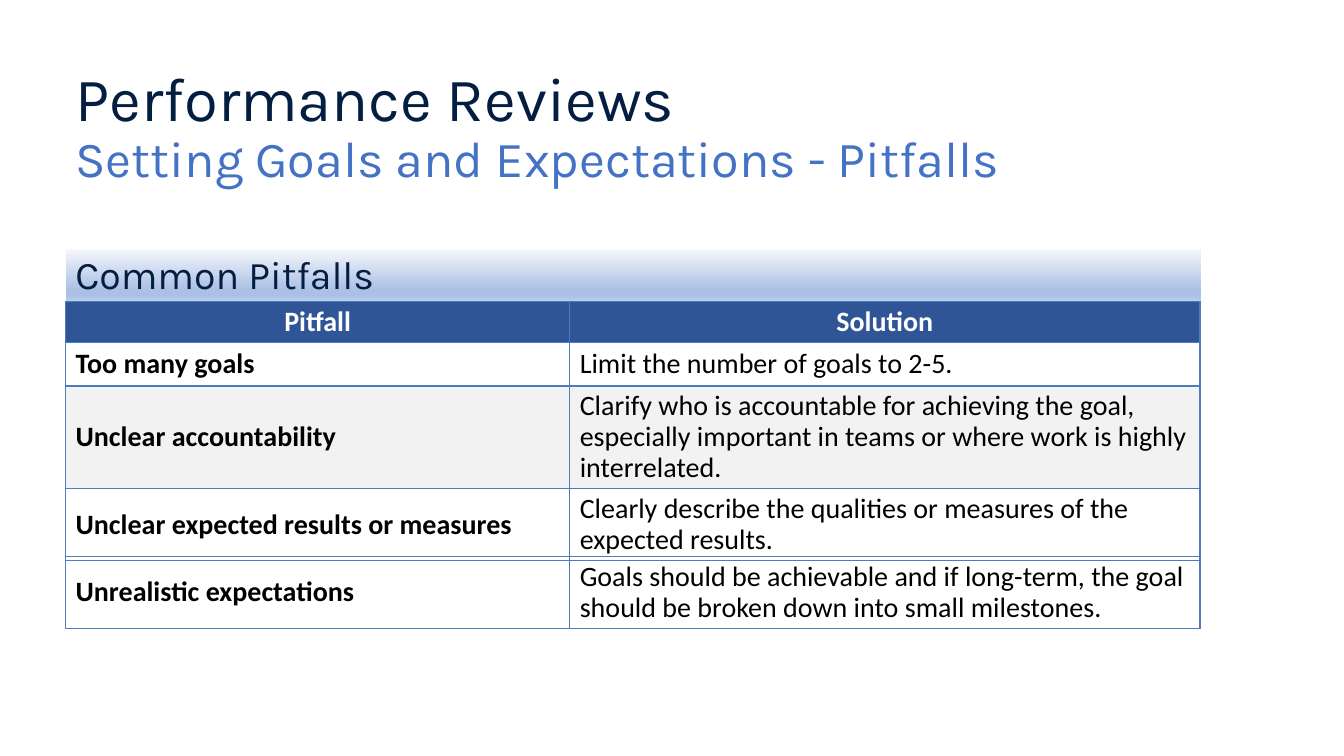
from dataclasses import dataclass
from typing import Optional

import lxml.etree
import pptx
import pptx.dml.color
import pptx.enum.shapes
import pptx.enum.text
import pptx.oxml
import pptx.oxml.ns
import pptx.util

ALIGN = pptx.enum.text.PP_ALIGN
ANCHOR = pptx.enum.text.MSO_ANCHOR
SLIDE_WIDTH = pptx.util.Inches(13.33)
SLIDE_HEIGHT = pptx.util.Inches(7.5)


@dataclass(frozen=True)
class Theme:
    heading_font: str = "Karla"
    body_font: str = "Calibri"
    navy: str = "041E42"
    blue: str = "4472C4"
    header_fill: str = "2F5597"
    band_fill: str = "F2F2F2"
    border: str = "4A7EBB"
    white: str = "FFFFFF"
    black: str = "000000"
    banner_stops: tuple = ((0, "F6F8FC"), (74, "ABC0E4"), (83, "ABC0E4"), (100, "C7D5ED"))
    title_size: float = 44
    subtitle_size: float = 36
    banner_size: float = 28
    body_size: float = 20
    border_width: float = 1
    line_spacing: float = 0.9


THEME = Theme()


@dataclass(frozen=True)
class Area:
    left: float
    top: float
    width: float
    height: float

    def emu(self) -> tuple:
        return (across(self.left), down(self.top), across(self.width), down(self.height))


@dataclass(frozen=True)
class TextRun:
    text: str
    font: str
    size: float
    color: str
    bold: bool = False


@dataclass(frozen=True)
class PitfallRow:
    pitfall: str
    solution: str
    height: float
    fill: Optional[str] = None
    header: bool = False


LEFT = 4.88
COLUMNS = (37.51, 46.89)
TITLE_AREA = Area(LEFT, 7.33, 86.27, 19.33)
BANNER_AREA = Area(LEFT, 32.93, 84.47, 7.33)

MAIN_TOP = 39.87
MAIN_ROWS = (
    PitfallRow("Pitfall", "Solution", 5.47, THEME.header_fill, header=True),
    PitfallRow("Too many goals", "Limit the number of goals to 2-5.", 5.73),
    PitfallRow(
        "Unclear accountability",
        "Clarify who is accountable for achieving the goal, especially important "
        "in teams or where work is highly interrelated.",
        13.6,
        THEME.band_fill,
    ),
    PitfallRow(
        "Unclear expected results or measures",
        "Clearly describe the qualities or measures of the expected results.",
        9.4,
    ),
)
LAST_TOP = 73.6
LAST_ROWS = (
    PitfallRow(
        "Unrealistic expectations",
        "Goals should be achievable and if long-term, the goal should be broken "
        "down into small milestones.",
        9.4,
    ),
)


def across(percent: float) -> int:
    return round(SLIDE_WIDTH * percent / 100)


def down(percent: float) -> int:
    return round(SLIDE_HEIGHT * percent / 100)


def rgb(color: str) -> pptx.dml.color.RGBColor:
    return pptx.dml.color.RGBColor.from_string(color)


def write(frame, lines: tuple, align=ALIGN.LEFT) -> None:
    frame.word_wrap = True
    paragraph = frame.paragraphs[0]
    paragraph.alignment = align
    paragraph.line_spacing = THEME.line_spacing
    for index, line in enumerate(lines):
        if index:
            paragraph.add_line_break()
        run = paragraph.add_run()
        run.text = line.text
        run.font.name = line.font
        run.font.size = pptx.util.Pt(line.size)
        run.font.bold = line.bold
        run.font.color.rgb = rgb(line.color)


def add_title(slide) -> None:
    title = slide.shapes.add_textbox(*TITLE_AREA.emu())
    title.text_frame.vertical_anchor = ANCHOR.MIDDLE
    write(title.text_frame, (
        TextRun("Performance Reviews", THEME.heading_font, THEME.title_size, THEME.navy),
        TextRun("Setting Goals and Expectations - Pitfalls", THEME.heading_font,
                THEME.subtitle_size, THEME.blue),
    ))


def add_banner(slide) -> None:
    banner = slide.shapes.add_shape(
        pptx.enum.shapes.MSO_SHAPE.RECTANGLE, *BANNER_AREA.emu())
    banner.shadow.inherit = False
    banner.line.fill.background()
    banner.fill.gradient()
    banner.fill.gradient_angle = 270
    stops = banner.element.spPr.find(".//" + pptx.oxml.ns.qn("a:gsLst"))
    for stop in list(stops):
        stops.remove(stop)
    for percent, color in THEME.banner_stops:
        stop = lxml.etree.SubElement(
            stops, pptx.oxml.ns.qn("a:gs"), pos=str(percent * 1000))
        lxml.etree.SubElement(stop, pptx.oxml.ns.qn("a:srgbClr"), val=color)
    banner.text_frame.vertical_anchor = ANCHOR.MIDDLE
    write(banner.text_frame, (
        TextRun("Common Pitfalls", THEME.heading_font, THEME.banner_size, THEME.navy),
    ))


def add_borders(cell) -> None:
    properties = cell._tc.get_or_add_tcPr()
    for index, side in enumerate(("a:lnL", "a:lnR", "a:lnT", "a:lnB")):
        border = pptx.oxml.parse_xml(
            f'<{side} {pptx.oxml.ns.nsdecls("a")} w="{pptx.util.Pt(THEME.border_width)}">'
            f'<a:solidFill><a:srgbClr val="{THEME.border}"/></a:solidFill></{side}>')
        properties.insert(index, border)


def fill_cell(cell, text: str, row: PitfallRow, bold: bool) -> None:
    if row.fill:
        cell.fill.solid()
        cell.fill.fore_color.rgb = rgb(row.fill)
    else:
        cell.fill.background()
    add_borders(cell)
    cell.vertical_anchor = ANCHOR.BOTTOM if row.header else ANCHOR.MIDDLE
    color = THEME.white if row.header else THEME.black
    write(cell.text_frame,
          (TextRun(text, THEME.body_font, THEME.body_size, color, bold),),
          ALIGN.CENTER if row.header else ALIGN.LEFT)


def add_pitfalls(slide, top: float, rows: tuple) -> None:
    area = Area(LEFT, top, sum(COLUMNS), sum(row.height for row in rows))
    pitfalls = slide.shapes.add_table(len(rows), len(COLUMNS), *area.emu()).table
    pitfalls.first_row = any(row.header for row in rows)
    pitfalls.horz_banding = False
    for column, width in zip(pitfalls.columns, COLUMNS):
        column.width = across(width)
    for index, row in enumerate(rows):
        pitfalls.rows[index].height = down(row.height)
        fill_cell(pitfalls.cell(index, 0), row.pitfall, row, True)
        fill_cell(pitfalls.cell(index, 1), row.solution, row, row.header)


def main() -> None:
    deck = pptx.Presentation()
    deck.slide_width = SLIDE_WIDTH
    deck.slide_height = SLIDE_HEIGHT
    slide = deck.slides.add_slide(deck.slide_layouts[6])
    add_banner(slide)
    add_pitfalls(slide, MAIN_TOP, MAIN_ROWS)
    add_pitfalls(slide, LAST_TOP, LAST_ROWS)
    add_title(slide)
    deck.save("out.pptx")


if __name__ == "__main__":
    main()
